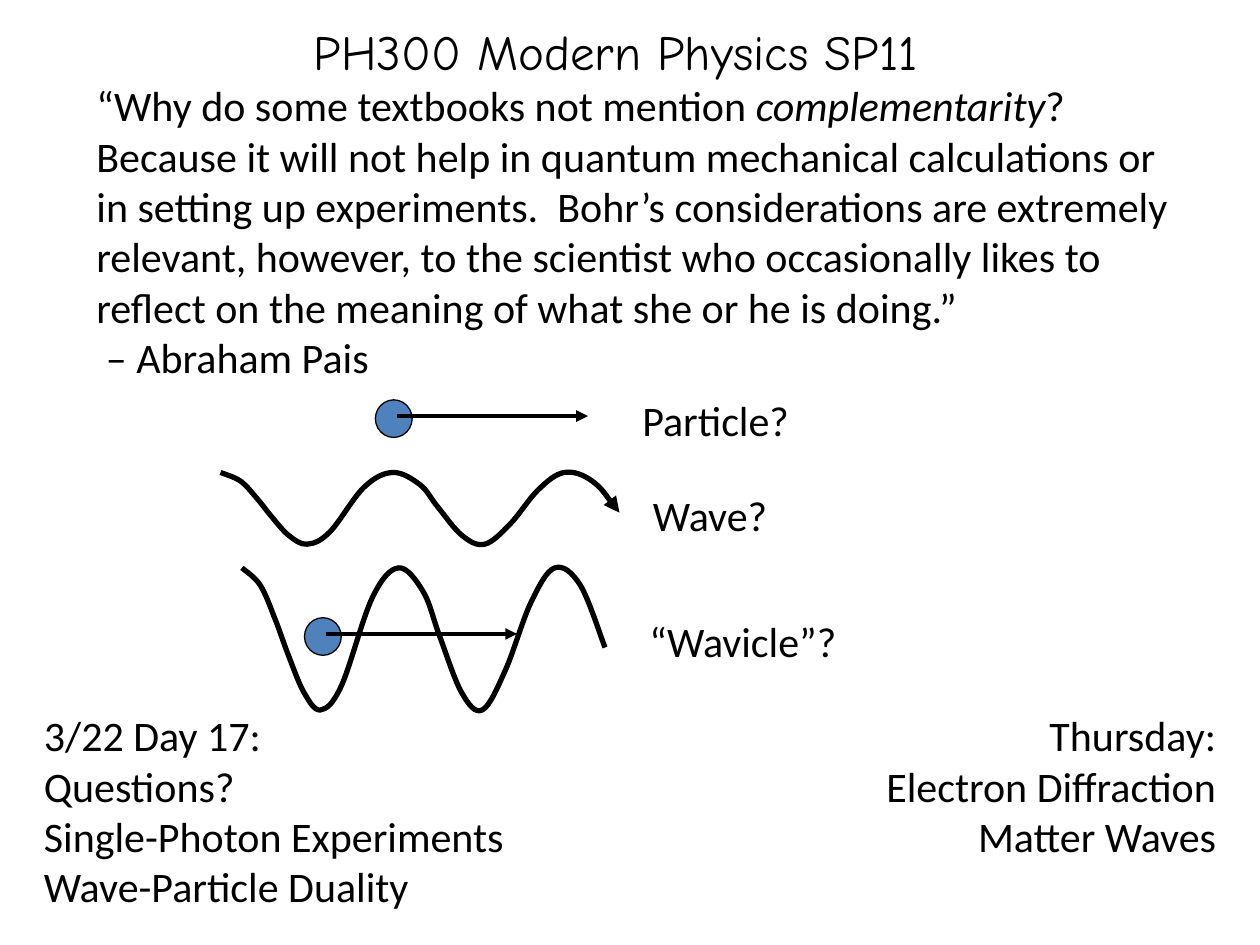
from lxml import etree
from pptx import Presentation
from pptx.dml.color import RGBColor
from pptx.enum import shapes, text
from pptx.oxml.ns import qn
from pptx.util import Pt

COLOURS = {"ink": "000000", "ball": "4F81BD", "paper": "FFFFFF"}

deck = Presentation()
deck.slide_width, deck.slide_height = Pt(720), Pt(540)
slide = deck.slides.add_slide(deck.slide_layouts[6])
slide.background.fill.solid()
slide.background.fill.fore_color.rgb = RGBColor.from_string(COLOURS["paper"])


def write(paragraphs, left, top, width, height, size=24, font="Calibri",
          align=text.PP_ALIGN.LEFT, wrap=True):
    """Add a text box; a paragraph is a list of (words, italic) runs or a string."""
    box = slide.shapes.add_textbox(Pt(left), Pt(top), Pt(width), Pt(height))
    frame = box.text_frame
    frame.word_wrap = wrap
    frame.auto_size = text.MSO_AUTO_SIZE.SHAPE_TO_FIT_TEXT
    for i, runs in enumerate(paragraphs):
        line = frame.paragraphs[0] if i == 0 else frame.add_paragraph()
        line.alignment = align
        for words, italic in [(runs, None)] if isinstance(runs, str) else runs:
            run = line.add_run()
            run.text = words
            run.font.size, run.font.name, run.font.italic = Pt(size), font, italic
            run.font.color.rgb = RGBColor.from_string(COLOURS["ink"])


def stroke(item, width, arrow=False):
    """Draw the outline in ink, without shadow, optionally ending in an arrow."""
    item.line.width = Pt(width)
    item.line.color.rgb = RGBColor.from_string(COLOURS["ink"])
    if arrow:
        etree.SubElement(item.line._get_or_add_ln(), qn("a:tailEnd"), type="triangle")
    etree.SubElement(item._element.spPr, qn("a:effectLst"))


# Wave, particle and wavicle: the wavicle's wave is the same curve, rescaled
WAVE_KNOTS = [(0, 0), (11.5, 5), (21, 15), (29, 25), (39, 36), (49.5, 41),
              (62.5, 34), (82, 8.5), (98.5, 0), (114, 7), (124, 19.5), (138, 36),
              (151, 41), (165.5, 29.5), (181.5, 10), (196.5, 0), (212.5, 5), (228, 23)]
particle = slide.shapes.add_group_shape()
wavicle = slide.shapes.add_group_shape()

for group, left, top in [(particle, 214.5, 228.5), (wavicle, 174, 353)]:
    ball = group.shapes.add_shape(shapes.MSO_SHAPE.OVAL, Pt(left), Pt(top), Pt(21), Pt(21.5))
    ball.fill.solid()
    ball.fill.fore_color.rgb = RGBColor.from_string(COLOURS["ball"])
    stroke(ball, 0.75)
    arrow_y = Pt(top + 9.25)
    motion = group.shapes.add_connector(shapes.MSO_CONNECTOR.STRAIGHT,
                                        Pt(left + 12.25), arrow_y, Pt(left + 121.5), arrow_y)
    stroke(motion, 2.25, arrow=True)

for parent, left, top, scale_x, scale_y, arrow in [
        (slide, 126, 270, 1, 1, True), (wavicle, 138.25, 324.5, 0.91, 1.98, False)]:
    knots = [(Pt(left + x * scale_x), Pt(top + y * scale_y)) for x, y in WAVE_KNOTS]
    builder = parent.shapes.build_freeform(*knots[0])
    builder.add_line_segments(knots[1:], close=False)
    wave = builder.convert_to_shape()
    wave.fill.background()
    stroke(wave, 3, arrow)

    # Turn the straight segments into smooth curves through the same knots
    points = [(int(p.get("x")), int(p.get("y"))) for p in wave._element.iter(qn("a:pt"))]
    ends = [points[0], *points, points[-1]]
    for i, segment in enumerate(list(wave._element.iter(qn("a:lnTo")))):
        before, start, end, after = ends[i:i + 4]
        handle_1 = [s + (e - b) / 6 for b, s, e in zip(before, start, end)]
        handle_2 = [e - (a - s) / 6 for s, e, a in zip(start, end, after)]
        curve = etree.Element(qn("a:cubicBezTo"))
        for x, y in (handle_1, handle_2, end):
            etree.SubElement(curve, qn("a:pt"), x=str(round(x)), y=str(round(y)))
        segment.getparent().replace(segment, curve)

# Quotation
write([[("“Why do some textbooks not mention ", False), ("complementarity", True),
        ("?  Because it will not help in quantum mechanical calculations or in setting up "
         "experiments.  Bohr’s considerations are extremely relevant, however, to the "
         "scientist who occasionally likes to reflect on the meaning of what she or he "
         "is doing.”", False)],
       " – Abraham Pais"], 48, 42, 630, 181.5)

# Labels beside the drawings
for label, left, top, width in [("Particle?", 360, 222, 99.5), ("Wave?", 366, 276, 80.5),
                                ("“Wavicle”?", 364, 348, 122)]:
    write([label], left, top, width, 36, wrap=False)

# Course title
write(["PH300 Modern Physics SP11"], 155.5, 8.5, 393, 41, size=28, font="Comic Neue",
      align=text.PP_ALIGN.CENTER, wrap=False)

# Today and next class
write(["3/22 Day 17:", "Questions?", "Single-Photon Experiments", "Wave-Particle Duality"],
      18, 402, 360, 124)
write(["Thursday:", "Electron Diffraction", "Matter Waves"],
      342, 402, 360, 94.5, align=text.PP_ALIGN.RIGHT)

deck.save("out.pptx")
